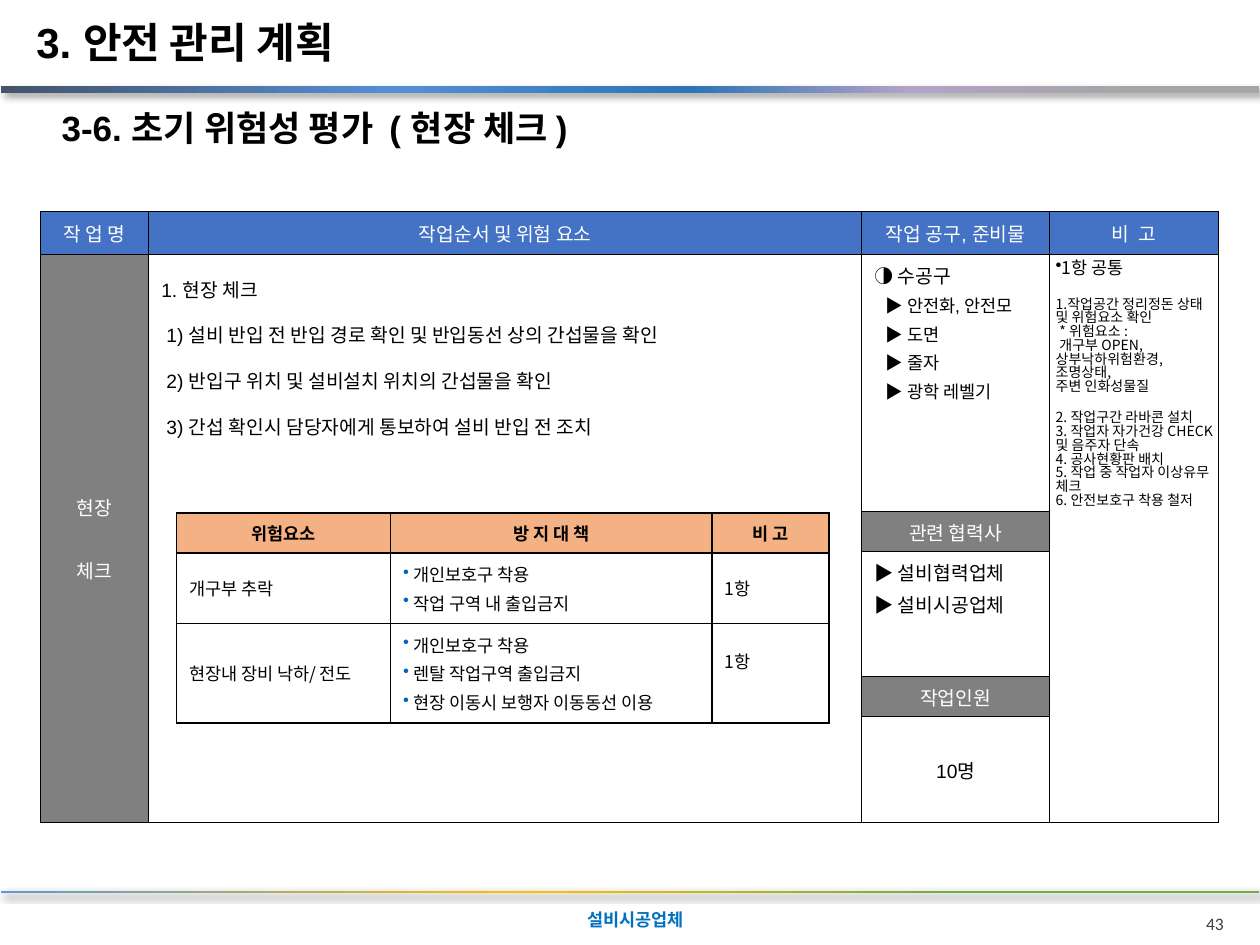
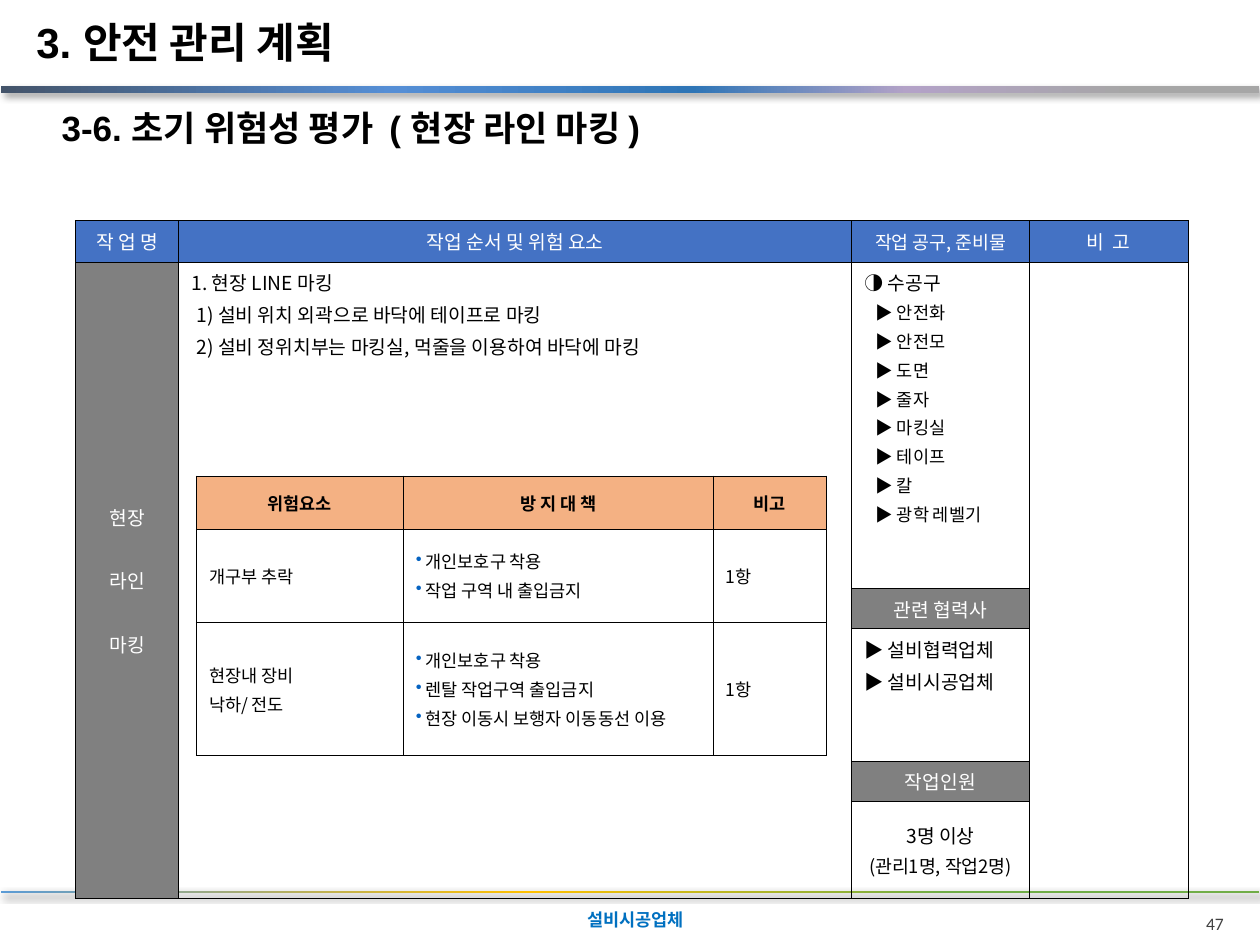
from lxml import etree
from pptx import Presentation
from pptx.dml.color import RGBColor
from pptx.enum import shapes, text
from pptx.oxml import ns
from pptx.util import Inches, Pt

COLORS = {"black": "000000", "white": "FFFFFF", "head": "4472C4", "gray": "808080",
          "risk": "F4B183", "bullet": "0563C1", "company": "0070C0", "number": "404040"}
KOREAN = "Noto Sans CJK KR"
CENTER, RIGHT = text.PP_ALIGN.CENTER, text.PP_ALIGN.RIGHT
MIDDLE, TOP = text.MSO_ANCHOR.MIDDLE, text.MSO_ANCHOR.TOP

SECTION = "3. 안전 관리 계획"
COMPANY = "설비시공업체"
PARTNERS = ["▶ 설비협력업체", "▶ " + COMPANY]
BANDS = [  # top, height, gradient stops (percent, colour)
    (0.68, 0.06, [(0, "44546A"), (31, "558ED5"), (55, "2E75B6"), (72, "B3A2C7"), (90, "A6A6A6")]),
    (7.07, 0.02, [(0, "5B9BD5"), (42, "FFC000"), (75, "70AD47")]),
]
FALL_MEASURES = ["개인보호구 착용", "작업 구역 내 출입금지"]
DROP_MEASURES = ["개인보호구 착용", "렌탈 작업구역 출입금지", "현장 이동시 보행자 이동동선 이용"]
FIRST_LINE = {"first": 0.03}

PAGES = [
    {
        "number": "43",
        "subtitle": "3-6. 초기 위험성 평가  ( 현장 체크 )",
        "subtitle_width": 4.79,
        "font": "Arial",
        "work": {
            "at": (0.32, 1.68), "border": 0.5,
            "cols": [0.86, 5.66, 1.49, 1.34], "rows": [0.34, 2.04, 0.32, 0.99, 0.32, 0.84],
        },
        "headings": ["작 업 명", "작업순서 및 위험 요소", "작업 공구, 준비물", "비  고"],
        "tools_heading_size": 11,
        "name": ["현장", "체크"],
        "step_spacing": 1.5,
        "steps": ["1. 현장 체크",
                  "1) 설비 반입 전 반입 경로 확인 및 반입동선 상의 간섭물을 확인",
                  "2) 반입구 위치 및 설비설치 위치의 간섭물을 확인",
                  "3) 간섭 확인시 담당자에게 통보하여 설비 반입 전 조치"],
        "tools": ["안전화, 안전모", "도면", "줄자", "광학 레벨기"],
        "people": ["10명"],
        "risk": {
            "at": (1.4, 4.07), "border": 1,
            "cols": [1.7, 2.55, 0.93], "rows": [0.32, 0.56, 0.79],
        },
        "remark_heading": "비 고",
        "drop_risk": ["현장내 장비 낙하/ 전도"],
        "last_remark_bottom": 0.24,
        "notes": [
            ("1항 공통", {"size": 10, "bullet": "black"}),
            ("1.작업공간 정리정돈 상태 및 위험요소 확인", {"before": 11.5}),
            ("* 위험요소 :", FIRST_LINE),
            ("개구부 OPEN, 상부낙하위험환경, 조명상태,", FIRST_LINE),
            "주변 인화성물질",
            ("2. 작업구간 라바콘 설치", {"before": 10}),
            "3. 작업자 자가건강 CHECK 및 음주자 단속",
            "4. 공사현황판 배치",
            "5. 작업 중 작업자 이상유무 체크",
            "6. 안전보호구 착용 철저",
        ],
    },
    {
        "number": "47",
        "subtitle": "3-6. 초기 위험성 평가  ( 현장 라인 마킹 )",
        "subtitle_width": 5.45,
        "font": KOREAN,
        "work": {
            "at": (0.6, 1.75), "border": 0.5,
            "cols": [0.82, 5.34, 1.41, 1.26], "rows": [0.33, 2.59, 0.32, 1.05, 0.32, 0.77],
        },
        "headings": ["작 업 명", "작업 순서 및 위험 요소", "작업 공구, 준비물", "비  고"],
        "tools_heading_size": 10.5,
        "name": ["현장", "라인", "마킹"],
        "step_spacing": 1,
        "steps": ["1. 현장 LINE 마킹",
                  "1) 설비 위치 외곽으로 바닥에 테이프로 마킹",
                  "2) 설비 정위치부는 마킹실, 먹줄을 이용하여 바닥에 마킹"],
        "tools": ["안전화", "안전모", "도면", "줄자", "마킹실", "테이프", "칼", "광학 레벨기"],
        "people": ["3명 이상", ("(관리1명, 작업2명)", {"size": 10.5})],
        "risk": {
            "at": (1.56, 3.78), "border": 0.75,
            "cols": [1.64, 2.46, 0.9], "rows": [0.42, 0.74, 1.06],
        },
        "remark_heading": "비고",
        "drop_risk": ["현장내 장비", "낙하/ 전도"],
        "last_remark_bottom": 0.05,
        "notes": [],
    },
]


def color(name):
    return RGBColor.from_string(COLORS[name])


def add_xml(parent, markup):
    """Append a DrawingML element, given without its namespace declaration."""
    head, rest = markup.split(">", 1) if not markup.endswith("/>") or markup.count("<") > 1 \
        else (markup[:-2], None)
    space = f' xmlns:a="{ns.nsdecls("a").split(chr(34))[1]}"'
    full = head + space + ("/>" if rest is None else ">" + rest)
    parent.append(etree.fromstring(full))


def write(frame, lines, size=11, font=KOREAN, ink="black", bold=False, align=None,
          before=None, spacing=None):
    """Write lines; each is a string or a (string, overrides) pair."""
    frame.word_wrap = True
    for index, line in enumerate(lines):
        words, own = line if isinstance(line, tuple) else (line, {})
        para = frame.paragraphs[0] if index == 0 else frame.add_paragraph()
        para.text = words
        para_size = own.get("size", size)
        if align is not None:
            para.alignment = align
        if spacing:
            para.line_spacing = spacing
        if index:
            gap = own.get("before", para_size * 0.2 if before is None else before)
            para.space_before = Pt(gap)
        props = para._p.get_or_add_pPr()
        left, first = own.get("left", 0), own.get("first", 0)
        props.set("marL", str(Inches(left)))
        props.set("indent", str(Inches(first)))
        if "bullet" in own:
            add_xml(props, f'<a:buClr><a:srgbClr val="{COLORS[own["bullet"]]}"/></a:buClr>')
            add_xml(props, '<a:buChar char="•"/>')
        para.font.size = Pt(para_size)
        para.font.bold = bold
        para.font.color.rgb = color(ink)
        para.font.name = font
        add_xml(props.find(ns.qn("a:defRPr")), f'<a:ea typeface="{KOREAN}"/>')


def add_text(page, at, lines, margins=(0.1, 0.05, 0.1, 0.05), anchor=TOP, **style):
    box = page.shapes.add_textbox(*map(Inches, at))
    frame = box.text_frame
    (frame.margin_left, frame.margin_top,
     frame.margin_right, frame.margin_bottom) = map(Inches, margins)
    frame.vertical_anchor = anchor
    write(frame, lines, **style)


def add_band(page, top, height, stops):
    band = page.shapes.add_shape(shapes.MSO_SHAPE.RECTANGLE, Inches(0.01), Inches(top),
                                 Inches(9.98), Inches(height))
    band.line.fill.background()
    band.fill.gradient()
    band.fill.gradient_angle = 0
    stop_list = band._element.spPr.find(".//" + ns.qn("a:gsLst"))
    for old in list(stop_list):
        stop_list.remove(old)
    for percent, hue in stops:
        add_xml(stop_list, f'<a:gs pos="{percent * 1000}"><a:srgbClr val="{hue}"/></a:gs>')
    add_xml(band._element.spPr,
            f'<a:effectLst><a:outerShdw blurRad="{Pt(4)}" dist="{Pt(3)}" dir="2700000" '
            'algn="tl" rotWithShape="0"><a:srgbClr val="000000"><a:alpha val="40000"/>'
            '</a:srgbClr></a:outerShdw></a:effectLst>')


def add_grid(page, layout):
    """Add an unfilled table with black borders on every cell."""
    cols, rows = layout["cols"], layout["rows"]
    left, top = layout["at"]
    grid = page.shapes.add_table(len(rows), len(cols), Inches(left), Inches(top),
                                 Inches(sum(cols)), Inches(sum(rows))).table
    grid.first_row = grid.horz_banding = False
    for column, width in zip(grid.columns, cols):
        column.width = Inches(width)
    for row, height in zip(grid.rows, rows):
        row.height = Inches(height)
    for cell in grid.iter_cells():
        props = cell._tc.get_or_add_tcPr()
        for side in "LRTB":
            add_xml(props, f'<a:ln{side} w="{Pt(layout["border"])}"><a:solidFill>'
                           f'<a:srgbClr val="{COLORS["black"]}"/></a:solidFill></a:ln{side}>')
        cell.fill.background()
    return grid


def put(cell, lines, fill=None, anchor=MIDDLE, **style):
    if fill:
        cell.fill.solid()
        cell.fill.fore_color.rgb = color(fill)
    cell.vertical_anchor = anchor
    write(cell.text_frame, lines, **style)


def add_work_table(page, plan):
    grid = add_grid(page, plan["work"])
    font = plan["font"]
    for col in (0, 1, 3):
        grid.cell(1, col).merge(grid.cell(5, col))
    for col, heading in enumerate(plan["headings"]):
        size = plan["tools_heading_size"] if col == 2 else 11
        put(grid.cell(0, col), [heading], "head", size=size, font=font, ink="white", align=CENTER)
    put(grid.cell(1, 0), plan["name"], "gray", font=font, ink="white", align=CENTER, before=20.4)
    first, *others = plan["steps"]
    put(grid.cell(1, 1), [first] + [(step, {"left": 0.04}) for step in others],
        anchor=TOP, font=font, spacing=plan["step_spacing"])
    tools = [("▶ " + tool, {"size": 10, "left": 0.09}) for tool in plan["tools"]]
    put(grid.cell(1, 2), ["◑ 수공구"] + tools, anchor=TOP, font=font)
    for row, label in ((2, "관련 협력사"), (4, "작업인원")):
        put(grid.cell(row, 2), [label], "gray", font=font, ink="white", align=CENTER)
    put(grid.cell(3, 2), PARTNERS, anchor=TOP, font=font)
    put(grid.cell(5, 2), plan["people"], font=font, align=CENTER)


def add_risk_table(page, plan):
    grid = add_grid(page, plan["risk"])
    for col, heading in enumerate(["위험요소", "방 지 대 책", plan["remark_heading"]]):
        put(grid.cell(0, col), [heading], "risk", size=10, bold=True, align=CENTER)
    risks = [(["개구부 추락"], FALL_MEASURES), (plan["drop_risk"], DROP_MEASURES)]
    hanging = {"left": 0.08, "first": -0.08, "bullet": "bullet"}
    for row, (risk, measures) in enumerate(risks, 1):
        columns = (risk, [(measure, hanging) for measure in measures], ["1항"])
        for col, lines in enumerate(columns):
            put(grid.cell(row, col), lines, size=10)
    grid.cell(2, 2).margin_bottom = Inches(plan["last_remark_bottom"])


def add_page(deck, plan):
    page = deck.slides.add_slide(deck.slide_layouts[6])
    add_text(page, (4.63, 7.14, 2.18, 0.32), [COMPANY], (0.03,) * 4, MIDDLE,
             size=10, ink="company", bold=True)
    for band in BANDS:
        add_band(page, *band)
    add_work_table(page, plan)
    add_risk_table(page, plan)
    if plan["notes"]:
        add_text(page, (8.28, 2.02, 1.48, 2.52), plan["notes"], (0.1, 0.05, 0.1, 0.13),
                 size=8, before=0, spacing=0.82)
    add_text(page, (0.19, 0, 3.68, 0.67), [SECTION], anchor=MIDDLE,
             size=24, font="Arial", bold=True)
    add_text(page, (8.54, 7.2, 1.27, 0.21), [plan["number"]],
             size=10, font="Calibri", ink="number", align=RIGHT)
    add_text(page, (0.39, 0.8, plan["subtitle_width"], 0.44), [plan["subtitle"]],
             size=20, font="Arial", bold=True)


def main():
    deck = Presentation()
    deck.slide_width, deck.slide_height = Inches(10), Inches(7.5)
    for plan in PAGES:
        add_page(deck, plan)
    deck.save("out.pptx")


if __name__ == "__main__":
    main()
